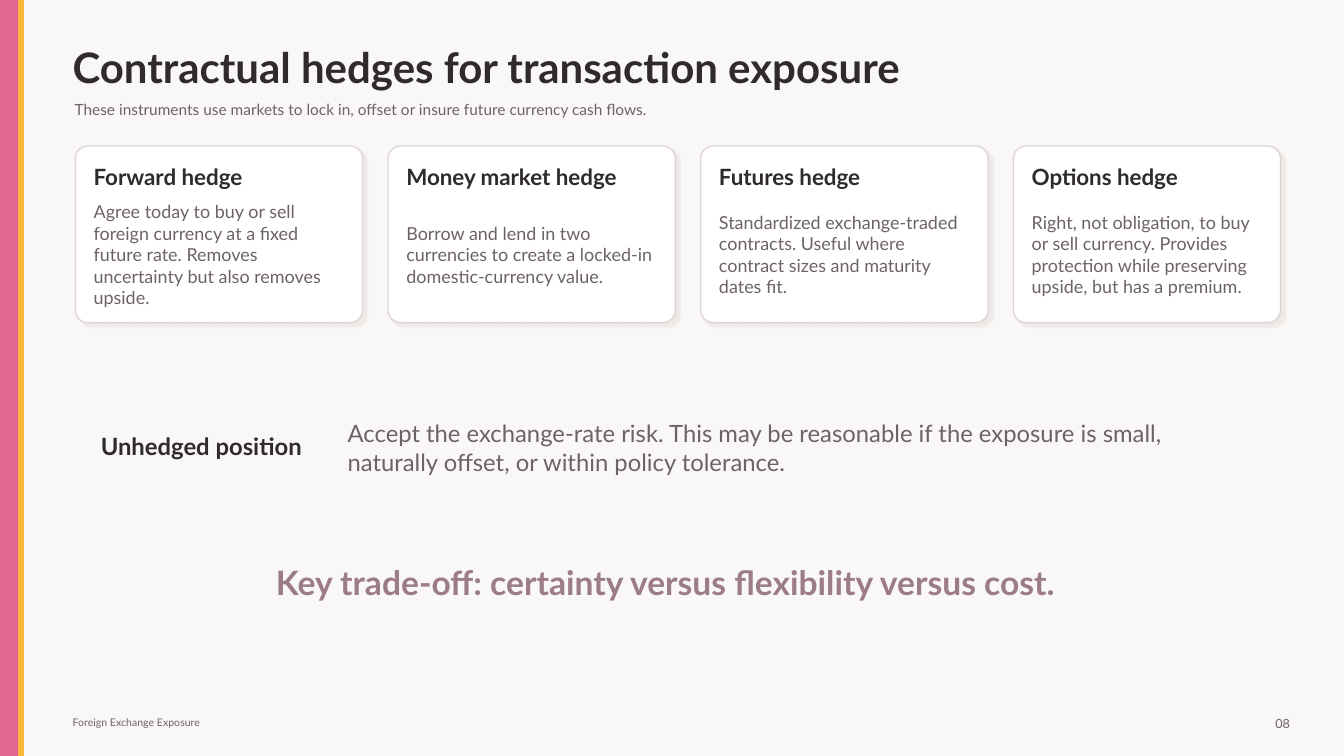
import pptx
import pptx.dml.color
import pptx.enum.shapes
import pptx.enum.text
import pptx.oxml.ns
import pptx.util
from lxml import etree
from pptx.util import Cm

TITLE = "Contractual hedges for transaction exposure"
SUBTITLE = "These instruments use markets to lock in, offset or insure future currency cash flows."
# heading, description, card width in cm
HEDGES = [
    ("Forward hedge",
     "Agree today to buy or sell foreign currency at a fixed future rate. "
     "Removes uncertainty but also removes upside.", 7.24),
    ("Money market hedge",
     "Borrow and lend in two currencies to create a locked-in domestic-currency value.", 7.24),
    ("Futures hedge",
     "Standardized exchange-traded contracts. Useful where contract sizes and maturity dates fit.",
     7.24),
    ("Options hedge",
     "Right, not obligation, to buy or sell currency. "
     "Provides protection while preserving upside, but has a premium.", 6.73),
]
UNHEDGED = "Unhedged position"
UNHEDGED_TEXT = ("Accept the exchange-rate risk. This may be reasonable if the exposure is small, "
                 "naturally offset, or within policy tolerance.")
TRADE_OFF = "Key trade-off: certainty versus flexibility versus cost."
FOOTER = "Foreign Exchange Exposure"
PAGE_NUMBER = "08"

FONT = "Lato"
COLORS = {
    "background": "FAF8F6", "pink": "E46791", "yellow": "FAB938", "dark": "2F2A2D",
    "grey": "6D6264", "mauve": "9B7C87", "card": "FFFFFF", "border": "D8CCD0",
    "shadow": "B8ADA8",
}
SLIDE_WIDTH, SLIDE_HEIGHT = 33.87, 19.05
CARD_LEFT, CARD_TOP, CARD_HEIGHT, CARD_PITCH = 1.9, 3.68, 4.45, 7.88
CARD_PADDING = 0.46
LEFT, CENTER, RIGHT = (pptx.enum.text.PP_ALIGN.LEFT, pptx.enum.text.PP_ALIGN.CENTER,
                       pptx.enum.text.PP_ALIGN.RIGHT)
SHAPES = pptx.enum.shapes.MSO_SHAPE


def color(name):
    return pptx.dml.color.RGBColor.from_string(COLORS[name])


def add_box(slide, kind, left, top, width, height, fill, line):
    shape = slide.shapes.add_shape(kind, Cm(left), Cm(top), Cm(width), Cm(height))
    shape.shadow.inherit = False
    shape.fill.solid()
    shape.fill.fore_color.rgb = color(fill)
    shape.line.color.rgb = color(line)
    shape.line.width = pptx.util.Pt(1)
    return shape


def add_text(slide, text, left, top, width, height, size, ink, bold=False, align=LEFT):
    box = slide.shapes.add_textbox(Cm(left), Cm(top), Cm(width), Cm(height))
    frame = box.text_frame
    frame.word_wrap = True
    frame.vertical_anchor = pptx.enum.text.MSO_ANCHOR.MIDDLE
    frame.margin_left = frame.margin_right = frame.margin_top = frame.margin_bottom = 0
    frame.text = text
    paragraph = frame.paragraphs[0]
    paragraph.alignment = align
    font = paragraph.runs[0].font
    font.name, font.size, font.bold = FONT, pptx.util.Pt(size), bold
    font.color.rgb = color(ink)


def add_xml(parent, tag, **attributes):
    return etree.SubElement(parent, pptx.oxml.ns.qn(tag), attributes)


def add_card(slide, left, width, heading, description):
    card = add_box(slide, SHAPES.ROUNDED_RECTANGLE, left, CARD_TOP, width, CARD_HEIGHT,
                   "card", "border")
    card.adjustments[0] = 0.07
    properties = card._element.spPr
    border = properties.find(".//" + pptx.oxml.ns.qn("a:ln")).find(
        ".//" + pptx.oxml.ns.qn("a:srgbClr"))
    add_xml(border, "a:alpha", val="80000")
    effects = properties.find(pptx.oxml.ns.qn("a:effectLst"))
    shadow = add_xml(effects, "a:outerShdw", blurRad=str(pptx.util.Pt(1)),
                     dist=str(pptx.util.Pt(4)), dir="2700000", algn="tl", rotWithShape="0")
    add_xml(add_xml(shadow, "a:srgbClr", val=COLORS["shadow"]), "a:alpha", val="18000")

    text_left, text_width = left + CARD_PADDING, width - 2 * CARD_PADDING
    add_text(slide, heading, text_left, 4.09, text_width, 0.71, 16, "dark", bold=True)
    add_text(slide, description, text_left, 5.08, text_width, 2.67, 12.8, "grey")


def main():
    presentation = pptx.Presentation()
    presentation.slide_width, presentation.slide_height = Cm(SLIDE_WIDTH), Cm(SLIDE_HEIGHT)
    slide = presentation.slides.add_slide(presentation.slide_layouts[6])
    slide.background.fill.solid()
    slide.background.fill.fore_color.rgb = color("background")

    for left, width, stripe in ((0, 0.46, "pink"), (0.46, 0.13, "yellow")):
        add_box(slide, SHAPES.RECTANGLE, left, 0, width, SLIDE_HEIGHT, stripe, stripe)

    add_text(slide, TITLE, 1.83, 1.07, 30.23, 1.22, 30, "dark", bold=True)
    add_text(slide, SUBTITLE, 1.88, 2.39, 28.96, 0.71, 11, "grey")
    for index, (heading, description, width) in enumerate(HEDGES):
        add_card(slide, CARD_LEFT + index * CARD_PITCH, width, heading, description)

    add_text(slide, UNHEDGED, 2.54, 10.87, 5.59, 0.76, 17, "dark", bold=True)
    add_text(slide, UNHEDGED_TEXT, 8.76, 10.57, 20.7, 1.4, 17, "grey")
    add_text(slide, TRADE_OFF, 2.54, 14.1, 28.45, 1.14, 24, "mauve", bold=True, align=CENTER)
    add_text(slide, FOOTER, 1.83, 17.98, 8.89, 0.46, 7.5, "grey")
    add_text(slide, PAGE_NUMBER, 31.62, 17.91, 0.89, 0.64, 9, "grey", align=RIGHT)
    presentation.save("out.pptx")


if __name__ == "__main__":
    main()
